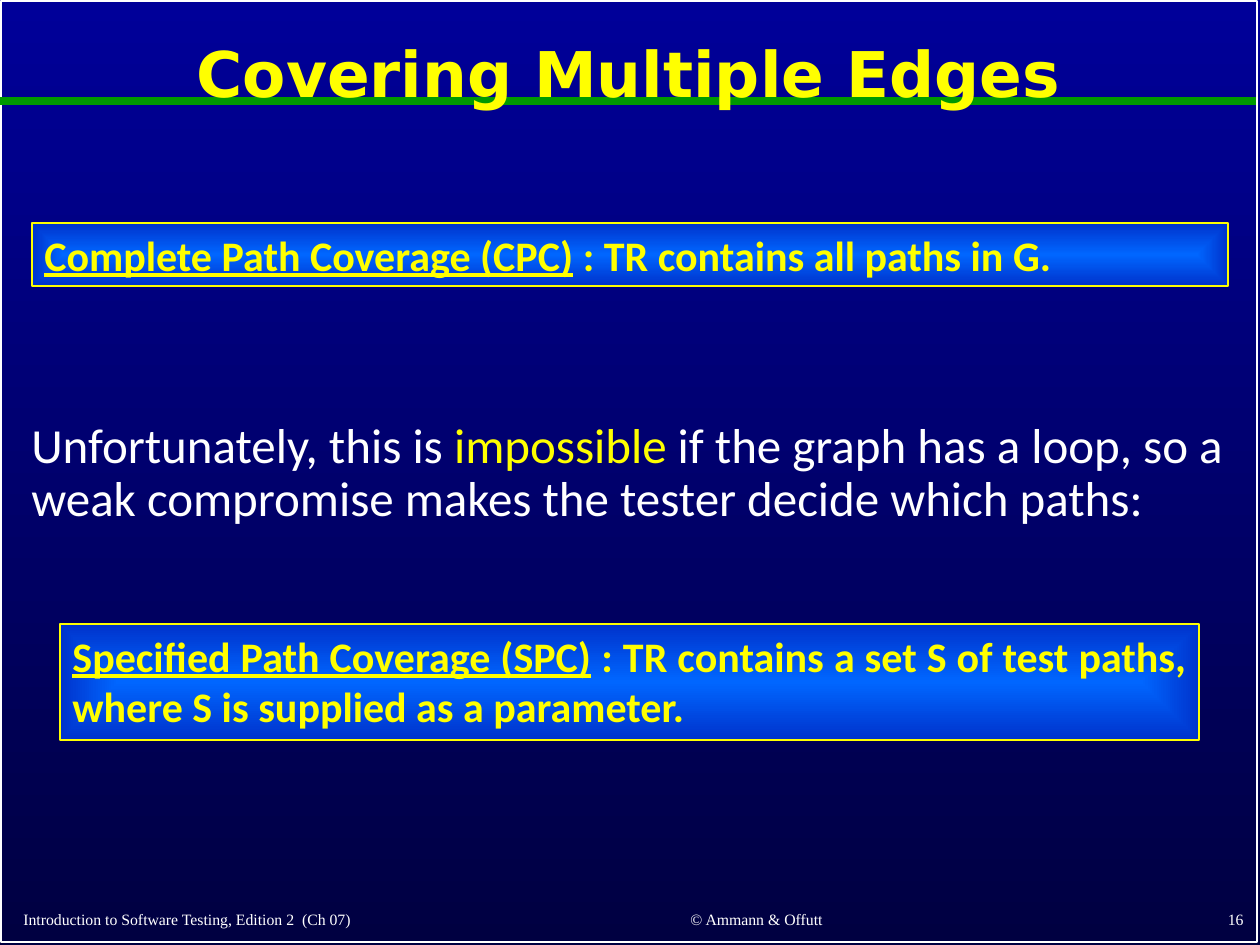
from dataclasses import dataclass

from lxml.etree import SubElement
from pptx import Presentation
from pptx.dml.color import RGBColor
from pptx.enum.shapes import MSO_CONNECTOR as Connector, MSO_SHAPE as Shape
from pptx.enum.text import MSO_ANCHOR as Anchor, PP_ALIGN as Align
from pptx.oxml.ns import qn
from pptx.util import Emu, Pt

PX_PER_INCH = 126
WHITE = RGBColor(0xFF, 0xFF, 0xFF)
YELLOW = RGBColor(0xFF, 0xFF, 0x00)
GREEN = RGBColor(0x00, 0x99, 0x00)
NAVY_TOP = RGBColor(0x00, 0x00, 0x99)
NAVY_BOTTOM = RGBColor(0x00, 0x00, 0x41)
BOX_CENTRE = RGBColor(0x00, 0x66, 0xFF)
BOX_EDGE = RGBColor(0x00, 0x33, 0xCC)


def px(length: int) -> Emu:
    return Emu(round(length * 914400 / PX_PER_INCH))


@dataclass(frozen=True)
class Area:
    left: int
    top: int
    width: int
    height: int

    def emu(self) -> tuple:
        return px(self.left), px(self.top), px(self.width), px(self.height)


@dataclass(frozen=True)
class Run:
    text: str
    color: RGBColor = YELLOW
    underline: bool = False


@dataclass(frozen=True)
class Criterion:
    area: Area
    name: str
    definition: str


@dataclass(frozen=True)
class Footer:
    area: Area
    text: str
    align: Align


CRITERIA = [
    Criterion(Area(32, 223, 1196, 63), "Complete Path Coverage (CPC)",
              " : TR contains all paths in G."),
    Criterion(Area(60, 624, 1139, 116), "Specified Path Coverage (SPC)",
              " : TR contains a set S of test paths, where S is supplied as a parameter."),
]
FOOTERS = [
    Footer(Area(11, 897, 519, 38), "Introduction to Software Testing, Edition 2  (Ch 07)", Align.LEFT),
    Footer(Area(557, 896, 399, 39), "© Ammann & Offutt", Align.CENTER),
    Footer(Area(994, 895, 262, 40), "16", Align.RIGHT),
]


def write_text(shape, runs: list[Run], *, size: int, font: str = "Calibri", bold: bool = False,
               align: Align = Align.LEFT, anchor: Anchor = Anchor.TOP,
               wrap: bool = True, line_spacing: float = 1.0) -> None:
    frame = shape.text_frame
    frame.word_wrap = wrap
    frame.vertical_anchor = anchor
    paragraph = frame.paragraphs[0]
    paragraph.alignment = align
    paragraph.line_spacing = line_spacing
    for item in runs:
        run = paragraph.add_run()
        run.text = item.text
        run.font.name = font
        run.font.size = Pt(size)
        run.font.bold = bold
        run.font.underline = item.underline
        run.font.color.rgb = item.color


def set_gradient(fill, start: RGBColor, end: RGBColor) -> None:
    """Fill with a gradient running from top to bottom."""
    fill.gradient()
    fill.gradient_angle = 270
    for stop, position, color in zip(fill.gradient_stops, (0, 1), (start, end)):
        stop.position = position
        stop.color.rgb = color


def radiate_from_centre(shape) -> None:
    """Turn the shape's linear gradient into one that follows its outline."""
    gradient = shape.element.spPr.find(qn("a:gradFill"))
    gradient.remove(gradient.find(qn("a:lin")))
    outline = SubElement(gradient, qn("a:path"), {"path": "shape"})
    SubElement(outline, qn("a:fillToRect"), dict.fromkeys("ltrb", "50000"))


def add_rectangle(slide, area: Area, color: RGBColor, line_width: float):
    rectangle = slide.shapes.add_shape(Shape.RECTANGLE, *area.emu())
    rectangle.shadow.inherit = False
    rectangle.fill.background()
    rectangle.line.color.rgb = color
    rectangle.line.width = Pt(line_width)
    return rectangle


def add_rule(slide, right: int, y: int) -> None:
    rule = slide.shapes.add_connector(Connector.STRAIGHT, 0, px(y), px(right), px(y))
    rule.line.color.rgb = GREEN
    rule.line.width = Pt(4.5)
    SubElement(rule.element.spPr, qn("a:effectLst"))


def add_title(slide) -> None:
    title = slide.shapes.title
    title.left, title.top, title.width, title.height = Area(11, 14, 1235, 126).emu()
    write_text(title, [Run("Covering Multiple Edges")], size=36, font="DejaVu Sans", bold=True,
               align=Align.CENTER, anchor=Anchor.MIDDLE, line_spacing=0.9)
    # The title stands in front of the green rule.
    title.element.getparent().append(title.element)


def add_criterion(slide, criterion: Criterion) -> None:
    box = add_rectangle(slide, criterion.area, YELLOW, 1.5)
    set_gradient(box.fill, BOX_CENTRE, BOX_EDGE)
    radiate_from_centre(box)
    write_text(box, [Run(criterion.name, underline=True), Run(criterion.definition)],
               size=24, bold=True, align=Align.JUSTIFY)


def add_footer(slide, footer: Footer) -> None:
    box = slide.shapes.add_textbox(*footer.area.emu())
    write_text(box, [Run(footer.text, WHITE)], size=9, font="Times New Roman",
               align=footer.align, anchor=Anchor.BOTTOM)


def main() -> None:
    presentation = Presentation()
    presentation.slide_width, presentation.slide_height = px(1260), px(945)
    slide = presentation.slides.add_slide(presentation.slide_layouts[5])
    set_gradient(slide.background.fill, NAVY_TOP, NAVY_BOTTOM)

    add_rectangle(slide, Area(1, 1, 1256, 941), WHITE, 1)
    add_rule(slide, right=1256, y=101)
    for footer in FOOTERS:
        add_footer(slide, footer)
    add_title(slide)
    for criterion in CRITERIA:
        add_criterion(slide, criterion)

    remark = slide.shapes.add_textbox(*Area(19, 415, 1222, 125).emu())
    write_text(remark, [
        Run("Unfortunately, this is ", WHITE),
        Run("impossible"),
        Run(" if the graph has a loop, so a weak compromise makes the tester decide which paths:", WHITE),
    ], size=28, line_spacing=0.9)

    presentation.save("out.pptx")


if __name__ == "__main__":
    main()
